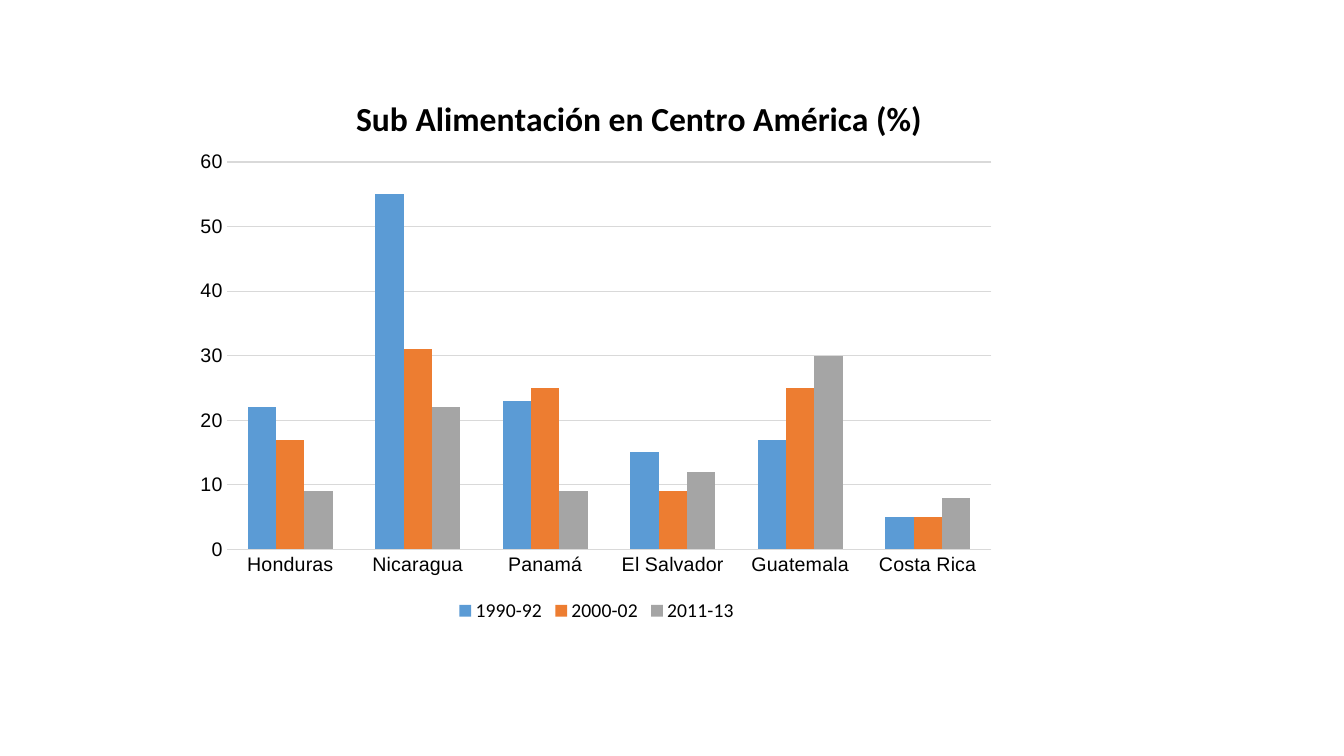
from dataclasses import dataclass

from lxml import etree
from pptx import Presentation
from pptx.chart.data import CategoryChartData
from pptx.dml.color import RGBColor
from pptx.enum.chart import XL_CHART_TYPE, XL_LEGEND_POSITION, XL_TICK_MARK
from pptx.oxml.ns import qn
from pptx.util import Pt

COLUMNS = XL_CHART_TYPE.COLUMN_CLUSTERED
BOTTOM = XL_LEGEND_POSITION.BOTTOM
NO_TICK = XL_TICK_MARK.NONE
BLANK_LAYOUT = 6


@dataclass(frozen=True)
class Theme:
    text: str = "000000"
    grid: str = "D9D9D9"
    series: tuple = ("5B9BD5", "ED7D31", "A5A5A5")
    body_font: str = "Calibri"
    axis_font: str = "Arial"
    title_size: int = 24
    label_size: int = 14


THEME = Theme()
SLIDE_SIZE = (960, 540)
CHART_BOX = (132.5, 52.5, 587.5, 395.3)
TITLE = "Sub Alimentación en Centro América (%)"
COUNTRIES = ("Honduras", "Nicaragua", "Panamá",
             "El Salvador", "Guatemala", "Costa Rica")
PERIODS = {
    "1990-92": (22, 55, 23, 15, 17, 5),
    "2000-02": (17, 31, 25, 9, 25, 5),
    "2011-13": (9, 22, 9, 12, 30, 8),
}


def set_font(font, name, size, bold=False):
    for key, value in {"name": name, "size": Pt(size), "bold": bold}.items():
        setattr(font, key, value)
    font.color.rgb = RGBColor.from_string(THEME.text)


def set_layout(parent, index, **places):
    """Place a chart part by fractions of the chart area."""
    for old in parent.findall(qn("c:layout")):
        parent.remove(old)
    layout = etree.Element(qn("c:layout"))
    manual = etree.SubElement(layout, qn("c:manualLayout"))
    for tag, value in places.items():
        etree.SubElement(manual, qn(f"c:{tag}")).set("val", str(value))
    parent.insert(index, layout)


def format_title(chart):
    tf = chart.chart_title.text_frame
    r = tf.paragraphs[0].add_run()
    r.text = TITLE
    set_font(r.font, THEME.body_font, THEME.title_size, bold=True)
    chart.chart_title.include_in_layout = False
    set_layout(chart.chart_title.element if hasattr(chart.chart_title, "element")
               else chart.element.find(".//" + qn("c:title")), 1,
               xMode="edge", yMode="edge", x=0.2, y=0.03)


def format_axes(chart):
    for axis in (chart.category_axis, chart.value_axis):
        axis.major_tick_mark = axis.minor_tick_mark = NO_TICK
        axis.format.line.fill.background()
        set_font(axis.tick_labels.font, THEME.axis_font, THEME.label_size)
    axis = chart.value_axis
    limits = {"minimum_scale": 0, "maximum_scale": 60, "major_unit": 10,
              "has_major_gridlines": True}
    for key, value in limits.items():
        setattr(axis, key, value)
    line = axis.major_gridlines.format.line
    line.width = Pt(0.75)
    line.color.rgb = RGBColor.from_string(THEME.grid)


def format_legend(chart):
    chart.has_legend = True
    chart.legend.position = BOTTOM
    chart.legend.include_in_layout = False
    set_font(chart.legend.font, THEME.body_font, THEME.label_size)


def add_undernourishment_chart(slide, box):
    data = CategoryChartData(number_format="0")
    data.categories = COUNTRIES
    for period, values in PERIODS.items():
        data.add_series(period, values)
    chart = slide.shapes.add_chart(COLUMNS, *map(Pt, box), data).chart
    set_font(chart.font, THEME.body_font, 10)

    plot = chart.plots[0]
    for key, value in {"gap_width": 150, "overlap": 0,
                       "vary_by_categories": False}.items():
        setattr(plot, key, value)
    for series, color in zip(plot.series, THEME.series):
        series.format.fill.solid()
        series.format.fill.fore_color.rgb = RGBColor.from_string(color)

    format_title(chart)
    format_axes(chart)
    format_legend(chart)
    set_layout(chart.element.find(".//" + qn("c:plotArea")), 0,
               layoutTarget="inner", xMode="edge", yMode="edge",
               x=0.05, y=0.16, w=0.93, h=0.7)


def main():
    prs = Presentation()
    prs.slide_width, prs.slide_height = map(Pt, SLIDE_SIZE)
    slide = prs.slides.add_slide(prs.slide_layouts[BLANK_LAYOUT])
    add_undernourishment_chart(slide, CHART_BOX)
    prs.save("out.pptx")


if __name__ == "__main__":
    main()
